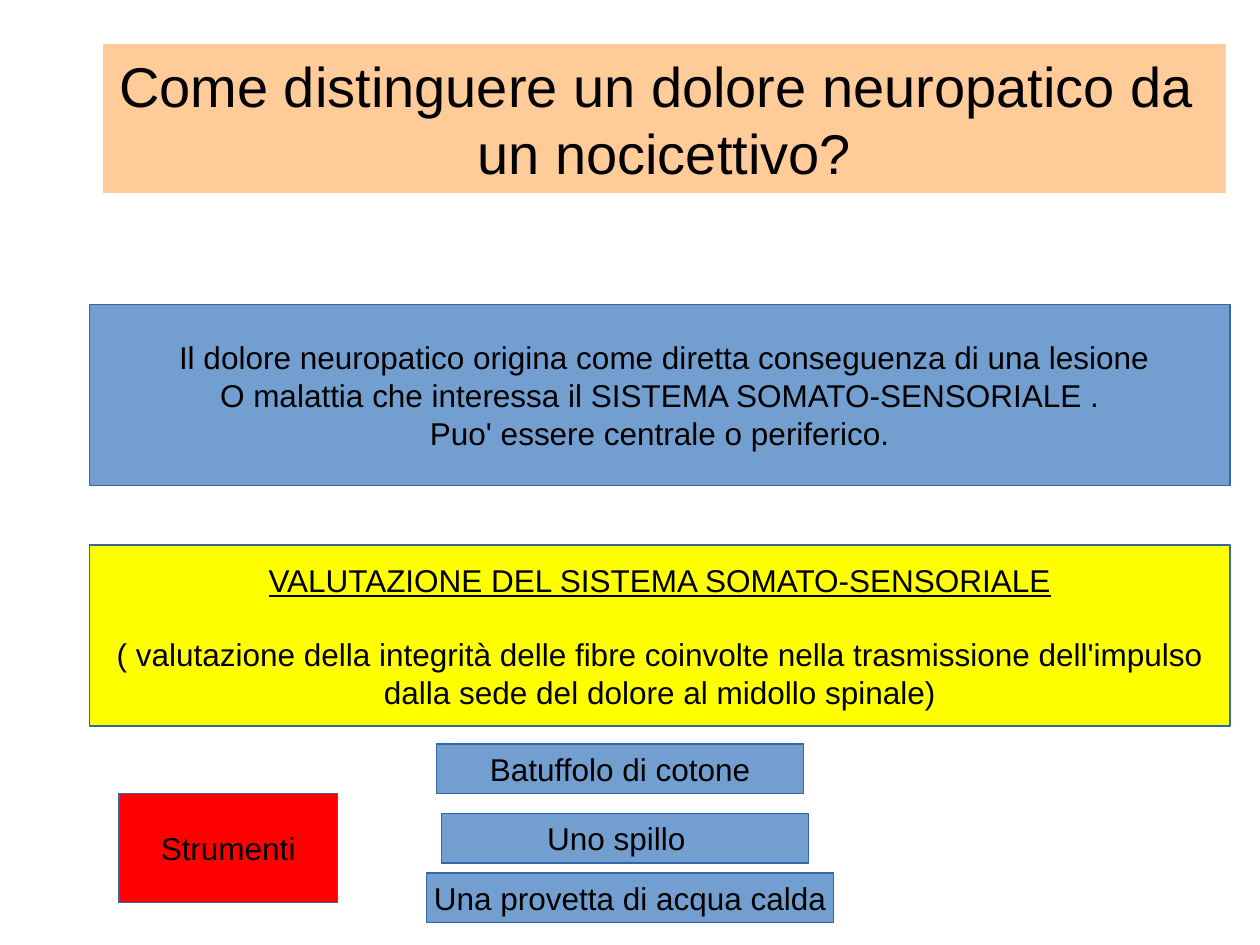
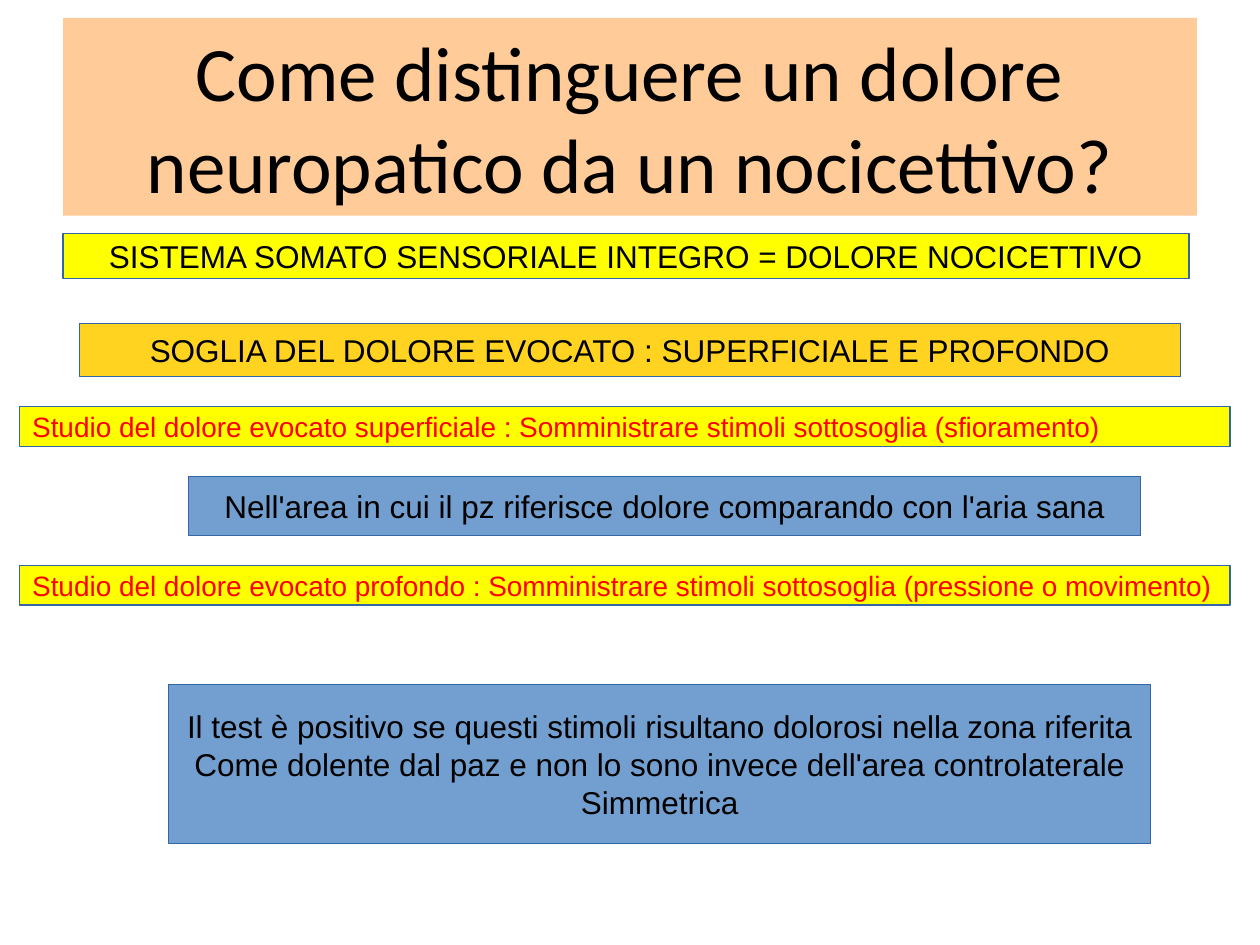
from pptx import Presentation
from pptx.dml.color import RGBColor
from pptx.enum.shapes import MSO_SHAPE
from pptx.enum.text import MSO_ANCHOR, MSO_AUTO_SIZE, PP_ALIGN
from pptx.util import Cm, Pt

PEACH, BLUE, YELLOW, GOLD = "FFCC99", "729FCF", "FFFF00", "FFD320"
RED, BLACK, OUTLINE = "FF0000", "000000", "3465A4"


def color(hex_value):
    """Return the colour for a hex string."""
    return RGBColor.from_string(hex_value)


def place(shape, box):
    """Set left, top, width and height of a shape in centimetres."""
    shape.left, shape.top, shape.width, shape.height = (Cm(value) for value in box)


def write(shape, lines, size, font="Arial", ink=BLACK, align=PP_ALIGN.CENTER, wrap=False):
    """Write formatted lines, centred vertically, in a shape."""
    text_frame = shape.text_frame
    text_frame.text = "\n".join(lines)
    text_frame.word_wrap = wrap
    text_frame.auto_size = MSO_AUTO_SIZE.NONE
    text_frame.vertical_anchor = MSO_ANCHOR.MIDDLE
    for paragraph in text_frame.paragraphs:
        paragraph.alignment = align
        for run in paragraph.runs:
            run.font.name = font
            run.font.size = Pt(size)
            run.font.color.rgb = color(ink)


def add_titled_slide(presentation, box, lines, size, font):
    """Add a title-only slide with a peach title band."""
    slide = presentation.slides.add_slide(presentation.slide_layouts[5])
    title = slide.shapes.title
    place(title, box)
    title.fill.solid()
    title.fill.fore_color.rgb = color(PEACH)
    write(title, lines, size, font, wrap=len(lines) == 1)
    return slide


def add_panel(slide, box, lines, fill=BLUE, size=18, **style):
    """Add a thinly outlined rectangle with text."""
    panel = slide.shapes.add_shape(MSO_SHAPE.RECTANGLE, *(Cm(value) for value in box))
    panel.shadow.inherit = False
    panel.fill.solid()
    panel.fill.fore_color.rgb = color(fill)
    panel.line.color.rgb = color(OUTLINE)
    panel.line.width = Pt(0)
    write(panel, lines, size, **style)
    return panel


def add_study_strip(slide, box, text):
    """Add a yellow strip with red text that starts at the left."""
    strip = add_panel(slide, box, [text], YELLOW, 16, ink=RED, align=PP_ALIGN.LEFT, wrap=True)
    strip.text_frame.margin_left = Cm(0.25)
    strip.text_frame.margin_right = 0


def add_definitions(slide, box):
    """Add the definition and assessment panels, one above the other."""
    left, top, width, height = box
    panel_height, step = 3.65, height - 3.65
    add_panel(slide, (left, top, width, panel_height), [
        " Il dolore neuropatico origina come diretta conseguenza di una lesione",
        "O malattia che interessa il SISTEMA SOMATO-SENSORIALE .",
        "Puo' essere centrale o periferico.",
    ])
    assessment = add_panel(slide, (left, top + step, width, panel_height), [
        "VALUTAZIONE DEL SISTEMA SOMATO-SENSORIALE",
        "( valutazione della integrità delle fibre coinvolte nella trasmissione dell'impulso",
        "dalla sede del dolore al midollo spinale)",
    ], YELLOW)
    heading, explanation = assessment.text_frame.paragraphs[:2]
    heading.runs[0].font.underline = True
    explanation.space_before = Pt(20.7)


def add_instruments(slide, box):
    """Add the instruments label and the three instruments beside it."""
    left, top = box[:2]
    add_panel(slide, (left, top + 1, 4.4, 2.2), ["Strumenti"], RED)
    add_panel(slide, (left + 6.4, top, 7.4, 1), ["Batuffolo di cotone"])
    add_panel(slide, (left + 6.2, top + 2.6, 8.2, 1), ["Una provetta di acqua calda"])
    pin = add_panel(slide, (left + 6.5, top + 1.4, 7.4, 1), ["Uno spillo"])
    pin.text_frame.margin_right = Cm(0.6)


def build_assessment_slide(presentation):
    """Build the slide on the definition and the instruments."""
    slide = add_titled_slide(
        presentation, (2.08, 0.89, 22.63, 3),
        ["Come distinguere un dolore neuropatico da ", "un nocicettivo?"], 32, "Arial")
    add_definitions(slide, (1.8, 6.14, 23, 8.5))
    add_instruments(slide, (2.4, 15, 14.4, 3.6))


def build_threshold_slide(presentation):
    """Build the slide on the evoked pain threshold."""
    slide = add_titled_slide(
        presentation, (1.27, 0.36, 22.86, 3.99),
        ["Come distinguere un dolore neuropatico da un nocicettivo?"], 44, "Calibri")
    add_panel(slide, (1.27, 4.71, 22.7, 0.9),
              ["SISTEMA SOMATO SENSORIALE INTEGRO = DOLORE NOCICETTIVO"], YELLOW)
    add_panel(slide, (1.6, 6.52, 22.2, 1.07),
              ["SOGLIA DEL DOLORE EVOCATO : SUPERFICIALE E PROFONDO"], GOLD)
    add_study_strip(slide, (0.4, 8.2, 24.4, 0.8),
                    "Studio del dolore evocato superficiale : "
                    "Somministrare stimoli sottosoglia (sfioramento)")
    add_panel(slide, (3.8, 9.6, 19.2, 1.2),
              ["Nell'area in cui il pz riferisce dolore comparando con l'aria sana"])
    add_study_strip(slide, (0.4, 11.4, 24.4, 0.8),
                    "Studio del dolore evocato profondo : "
                    "Somministrare stimoli sottosoglia (pressione o movimento)")
    add_panel(slide, (3.4, 13.8, 19.8, 3.2), [
        "Il test è positivo se questi stimoli risultano dolorosi nella zona riferita",
        "Come dolente dal paz e non lo sono invece dell'area controlaterale",
        "Simmetrica",
    ])


def main():
    """Build and save the presentation."""
    presentation = Presentation()
    presentation.slide_width, presentation.slide_height = Cm(25.4), Cm(19.05)
    build_assessment_slide(presentation)
    build_threshold_slide(presentation)
    presentation.save("out.pptx")


if __name__ == "__main__":
    main()
